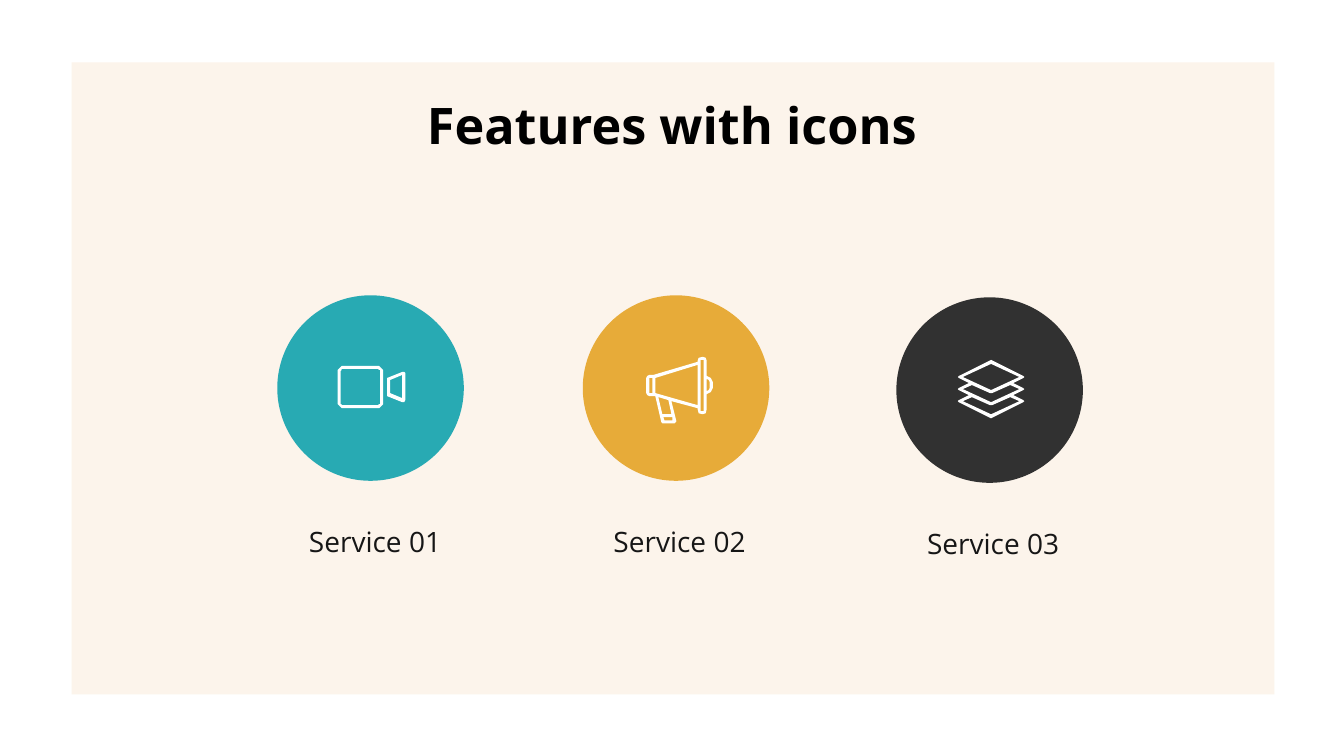
from math import cos, pi, sin

from pptx import Presentation
from pptx.dml.color import RGBColor
from pptx.enum.shapes import MSO_SHAPE as Shape
from pptx.enum.text import MSO_AUTO_SIZE as AutoSize, PP_ALIGN as Align
from pptx.util import Inches, Pt

FONT = "Open Sans"
CREAM = RGBColor(0xFC, 0xF4, 0xEB)
TEAL = RGBColor(0x28, 0xAA, 0xB3)
AMBER = RGBColor(0xE7, 0xAB, 0x39)
CHARCOAL = RGBColor(0x31, 0x31, 0x31)
WHITE = RGBColor(0xFF, 0xFF, 0xFF)
BLACK = RGBColor(0, 0, 0)
INK = RGBColor(0x16, 0x16, 0x16)


def rounded_box(left, top, right, bottom, radius, steps=6):
    """Corner points of a rounded rectangle, clockwise from the left side."""
    corners = [(left + radius, top + radius), (right - radius, top + radius),
               (right - radius, bottom - radius), (left + radius, bottom - radius)]
    points = []
    for quarter, (x, y) in enumerate(corners):
        for step in range(steps + 1):
            angle = pi + (quarter + step / steps) * pi / 2
            points.append((x + radius * cos(angle), y + radius * sin(angle)))
    return points


# Icon contours in hundredths of an inch; inner contours are cut out.
CAMERA = [
    rounded_box(0, 0, 45, 42, 6),
    rounded_box(3, 3, 42, 39, 3),
    [(49, 12), (64, 6), (66, 6), (67, 7), (67, 34), (66, 36), (64, 36), (49, 30)],
    [(64, 32), (52, 27), (52, 14), (64, 9)],
]
MEGAPHONE = [
    [(0, 21), (1, 19), (3, 18), (7, 18), (51, 5), (51, 4), (52, 1), (55.5, 0),
     (59, 1), (60, 4), (60, 19), (64, 21), (66, 25), (66, 31), (64, 35), (60, 37),
     (60, 52), (59, 56), (55.5, 57), (52, 56), (51, 52), (51, 51), (25, 44),
     (30, 64), (28, 66), (16, 66), (15, 65), (9, 39), (3, 39), (1, 38), (0, 36)],
    [(60, 22), (62, 23), (63, 25), (63, 31), (62, 33), (60, 34)],
    rounded_box(54, 3, 57, 54, 1.5),
    [(51, 48), (9, 36), (9, 21), (51, 8)],
    [(25, 57), (16, 57), (12, 40), (22, 43)],
    [(26, 63), (18, 63), (17, 60), (26, 60)],
    [(3, 21), (6, 21), (6, 36), (3, 36)],
]
LAYERS_RIGHT = [(33, 0), (65, 16), (66, 17), (65, 18), (55, 23), (65, 28), (66, 29),
                (65, 30), (55, 35), (65, 40), (66, 41), (65, 42), (33, 58)]
LOWER_SHEET = [(33, 42), (5, 29), (14, 25), (32, 33), (34, 33), (52, 25), (61, 29)]
LAYERS = [
    LAYERS_RIGHT + [(66 - x, y) for x, y in LAYERS_RIGHT[-2:0:-1]],
    [(5, 17), (33, 4), (61, 17), (33, 30)],
    LOWER_SHEET,
    [(x, y + 12) for x, y in LOWER_SHEET],
]

TITLE = "Features with icons"
# label, colour, circle corner, icon, icon corner, label corner
SERVICES = [
    ("Service 01", TEAL, (2.75, 2.93), CAMERA, (3.35, 3.63), (2.96, 5.15)),
    ("Service 02", AMBER, (5.78, 2.93), MEGAPHONE, (6.41, 3.54), (5.98, 5.15)),
    ("Service 03", CHARCOAL, (8.89, 2.95), LAYERS, (9.5, 3.57), (9.09, 5.17)),
]


def paint(shape, color):
    shape.shadow.inherit = False
    shape.fill.solid()
    shape.fill.fore_color.rgb = color
    shape.line.fill.background()


def add_filled(slide, kind, left, top, width, height, color):
    shape = slide.shapes.add_shape(
        kind, Inches(left), Inches(top), Inches(width), Inches(height))
    paint(shape, color)


def add_icon(slide, contours, left, top):
    builder = slide.shapes.build_freeform(*contours[0][0], scale=Inches(0.01))
    builder.add_line_segments(contours[0][1:], close=True)
    for contour in contours[1:]:
        builder.move_to(*contour[0])
        builder.add_line_segments(contour[1:], close=True)
    paint(builder.convert_to_shape(Inches(left), Inches(top)), WHITE)


def add_text(slide, text, left, top, width, height, size, color, bold=False, wrap=False):
    box = slide.shapes.add_textbox(
        Inches(left), Inches(top), Inches(width), Inches(height))
    frame = box.text_frame
    frame.word_wrap = wrap
    frame.auto_size = AutoSize.SHAPE_TO_FIT_TEXT
    paragraph = frame.paragraphs[0]
    paragraph.alignment = Align.CENTER
    run = paragraph.add_run()
    run.text = text
    run.font.name = FONT
    run.font.size = Pt(size)
    run.font.bold = bold
    run.font.color.rgb = color


def main():
    presentation = Presentation()
    presentation.slide_width = Inches(13.33)
    presentation.slide_height = Inches(7.5)
    slide = presentation.slides.add_slide(presentation.slide_layouts[6])

    add_filled(slide, Shape.RECTANGLE, 0.71, 0.62, 11.93, 6.27, CREAM)
    for label, color, circle_at, icon, icon_at, label_at in SERVICES:
        add_filled(slide, Shape.OVAL, *circle_at, 1.85, 1.84, color)
        add_icon(slide, icon, *icon_at)
        add_text(slide, label, *label_at, 1.52, 0.44, 20, INK)
    add_text(slide, TITLE, 0.68, 0.88, 11.97, 0.71, 36, BLACK, bold=True, wrap=True)

    presentation.save("out.pptx")


if __name__ == "__main__":
    main()
